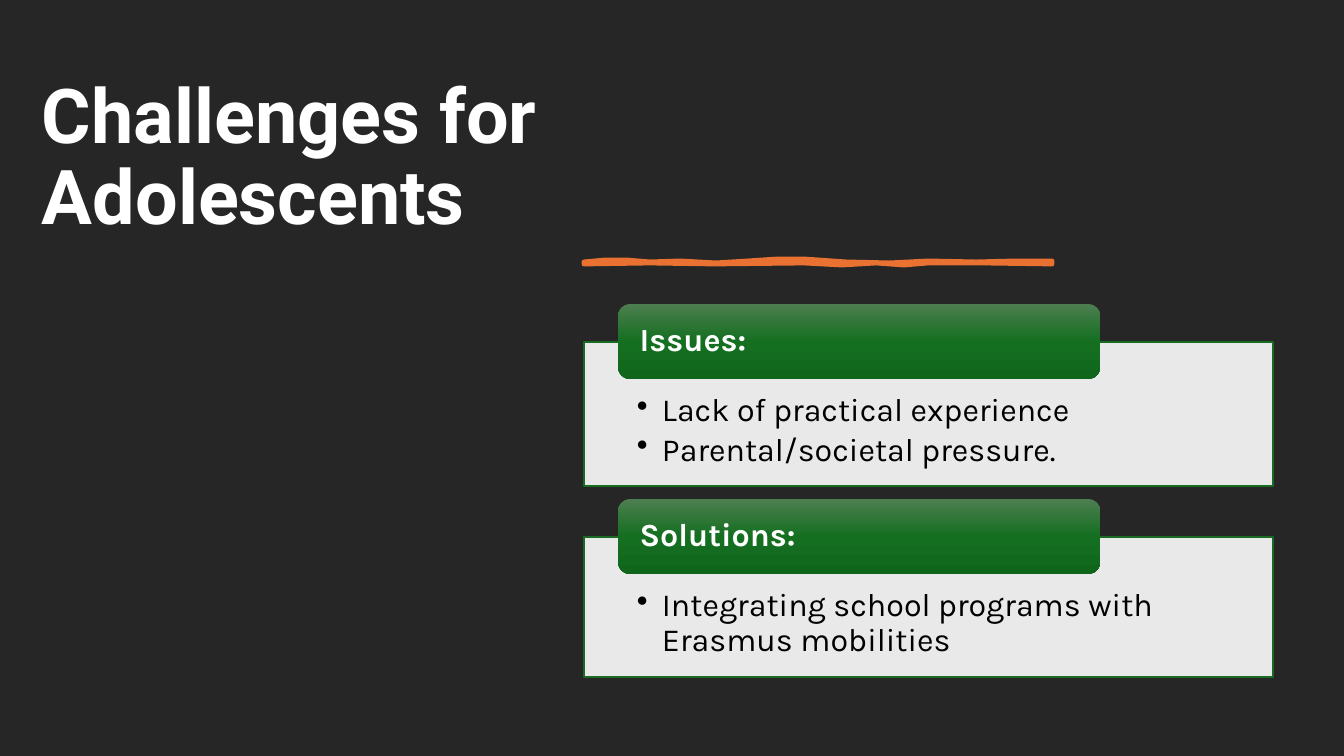
from lxml.etree import SubElement
from pptx import Presentation
from pptx.dml.color import RGBColor
from pptx.enum.shapes import MSO_SHAPE as Shape
from pptx.enum.text import MSO_ANCHOR as Anchor, MSO_AUTO_SIZE as AutoSize, PP_ALIGN as Align
from pptx.oxml.ns import qn
from pptx.util import Pt

PX = 914400 / 100.8
ORANGE, GREEN, WHITE, BLACK, DARK = "E97132", "196B24", "FFFFFF", "000000", "262626"
HEADER_STOPS = [(0, "4D7E50"), (50, "156F21"), (100, "0F661B")]
STROKE_TOP = [(0, 2), (22, 0), (42, 0), (66, 2), (96, 1), (132, 3), (164, 1), (194, -1),
              (220, -1), (262, 2), (306, 3), (344, 1), (392, 2), (432, 1), (468, 1)]
STROKE_BOTTOM = [(468, 4), (400, 3), (344, 3), (320, 5), (292, 3), (258, 5), (220, 3),
                 (130, 4), (66, 3), (0, 4)]
SECTIONS = [
    (304, 144, "Issues:", ["Lack of practical experience", "Parental/societal pressure."]),
    (499, 140, "Solutions:", ["Integrating school programs with Erasmus mobilities"]),
]


def px(length):
    """Turn pixels into EMU."""
    return round(length * PX)


def color(value):
    """Turn a hex string into a colour."""
    return RGBColor.from_string(value)


def paint(fill, value):
    """Give a fill one solid colour."""
    fill.solid()
    fill.fore_color.rgb = color(value)


def add_run(para, text, font, size, value, bold=False):
    """Append a formatted run to a paragraph."""
    run = para.add_run()
    run.text = text
    run.font.name, run.font.size, run.font.bold = font, Pt(size), bold
    run.font.color.rgb = color(value)
    para.alignment = Align.LEFT
    para.line_spacing = 0.9


def set_frame(shape, anchor, left, top, right, bottom):
    """Set anchor, insets and wrapping, and hand back the text frame."""
    frame = shape.text_frame
    frame.word_wrap, frame.auto_size = True, AutoSize.NONE
    frame.vertical_anchor = anchor
    frame.margin_left, frame.margin_top = px(left), px(top)
    frame.margin_right, frame.margin_bottom = px(right), px(bottom)
    return frame


def add_box(page, kind, left, top, width, height):
    """Add a preset shape without a shadow."""
    box = page.shapes.add_shape(kind, px(left), px(top), px(width), px(height))
    box.shadow.inherit = False
    return box


def add_title(page, left, top, width, height):
    """Place and fill the title."""
    title = page.shapes.title
    title.left, title.top, title.width, title.height = map(px, (left, top, width, height))
    frame = set_frame(title, Anchor.BOTTOM, 10, 5, 10, 5)
    add_run(frame.paragraphs[0], "Challenges for Adolescents", "Roboto", 54, WHITE, True)


def add_brush_stroke(page, left, top):
    """Draw the uneven orange stroke."""
    points = [(left + x, top + y) for x, y in STROKE_TOP + STROKE_BOTTOM]
    builder = page.shapes.build_freeform(*points[0], scale=PX)
    builder.add_line_segments(points[1:], close=True)
    stroke = builder.convert_to_shape()
    stroke.shadow.inherit = False
    paint(stroke.fill, ORANGE)
    paint(stroke.line.fill, ORANGE)
    stroke.line.width = Pt(3.5)


def add_bullet(para):
    """Give a paragraph a hanging bullet."""
    props = para._p.get_or_add_pPr()
    props.set("marL", str(px(25)))
    props.set("indent", str(px(-25)))
    SubElement(props, qn("a:buChar"), char="•")


def fill_gradient(shape, stops):
    """Fill a shape with a top-to-bottom gradient."""
    shape.fill.gradient()
    gradient = shape._element.spPr.find(qn("a:gradFill"))
    for child in list(gradient):
        gradient.remove(child)
    stop_list = SubElement(gradient, qn("a:gsLst"))
    for position, value in stops:
        stop = SubElement(stop_list, qn("a:gs"), pos=str(position * 1000))
        SubElement(stop, qn("a:srgbClr"), val=value)
    SubElement(gradient, qn("a:lin"), ang="5400000", scaled="0")


def add_section(page, left, top, width, height, heading, items):
    """Add a bulleted panel with a heading tab over its upper edge."""
    panel = add_box(page, Shape.RECTANGLE, left, top + 38, width, height)
    paint(panel.fill, WHITE)
    panel_color = panel._element.spPr.find(qn("a:solidFill")).find(qn("a:srgbClr"))
    SubElement(panel_color, qn("a:alpha"), val="90000")
    paint(panel.line.fill, GREEN)
    panel.line.width = Pt(1)
    frame = set_frame(panel, Anchor.TOP, 53, 52, 53, 18)
    for index, item in enumerate(items):
        para = frame.add_paragraph() if index else frame.paragraphs[0]
        add_run(para, item, "Karla", 23, BLACK)
        para.space_after = Pt(3.5)
        add_bullet(para)

    tab = add_box(page, Shape.ROUNDED_RECTANGLE, left + 34, top, width * 0.7, 75)
    fill_gradient(tab, HEADER_STOPS)
    tab.line.fill.background()
    frame = set_frame(tab, Anchor.MIDDLE, 18, 0, 18, 0)
    add_run(frame.paragraphs[0], heading, "Karla", 23, WHITE, True)


def main():
    """Build and save the deck."""
    deck = Presentation()
    deck.slide_width, deck.slide_height = px(1344), px(756)
    page = deck.slides.add_slide(deck.slide_layouts[5])
    paint(page.background.fill, DARK)
    add_title(page, 32, 49, 689, 197)
    add_brush_stroke(page, 584, 260)
    for top, height, heading, items in SECTIONS:
        add_section(page, 584, top, 689, height, heading, items)
    deck.save("out.pptx")


if __name__ == "__main__":
    main()
